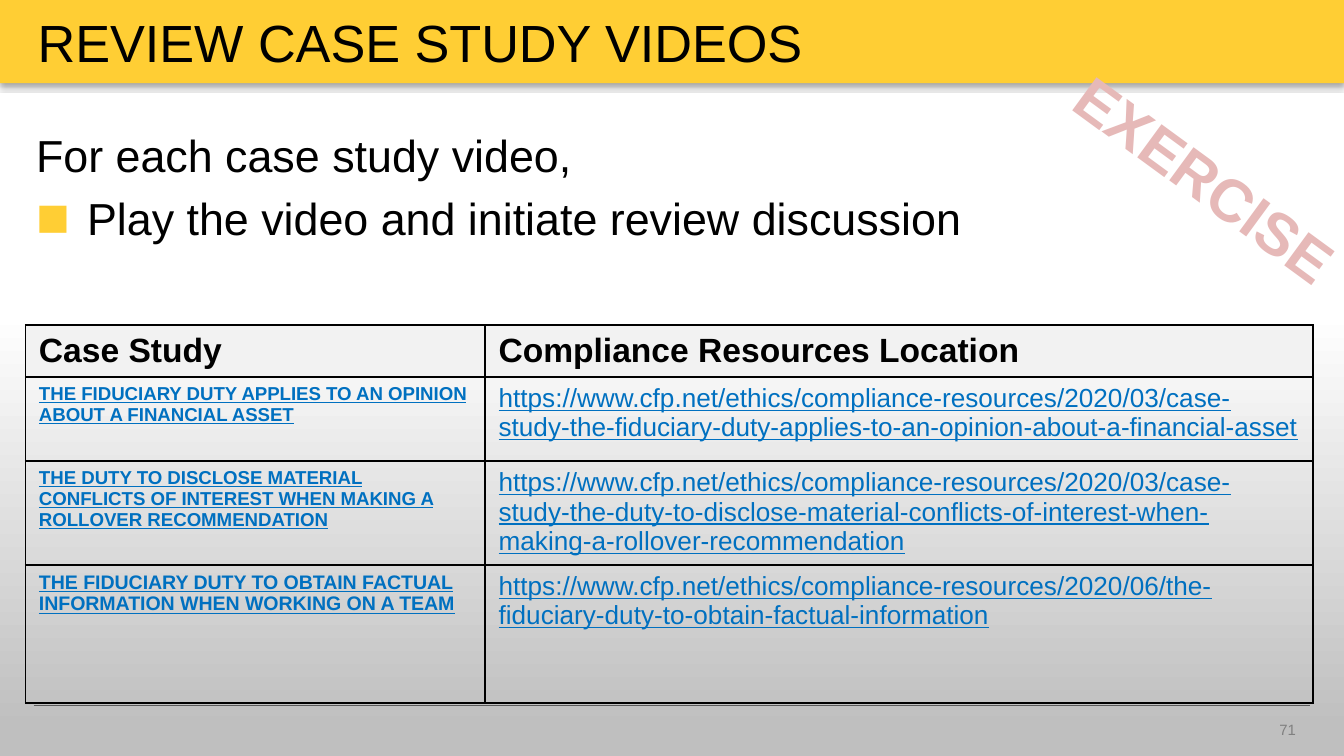
from lxml import etree
from pptx import Presentation
from pptx.dml.color import RGBColor
from pptx.enum.shapes import MSO_CONNECTOR, MSO_SHAPE
from pptx.enum.text import MSO_ANCHOR, PP_ALIGN
from pptx.oxml.ns import qn
from pptx.util import Inches, Pt

RECT, LINE = MSO_SHAPE.RECTANGLE, MSO_CONNECTOR.STRAIGHT
TOP, MID = MSO_ANCHOR.TOP, MSO_ANCHOR.MIDDLE
LEFT, CENTER = PP_ALIGN.LEFT, PP_ALIGN.CENTER

WIDE = 10
HIGH = WIDE * 9 / 16
FONT = "Arial"
HUES = {"gold": "FFCE34", "gray": "BFBFBF", "white": "FFFFFF", "rule": "595959",
        "stamp": "E6B9B8", "ink": "000000", "head": "F2F2F2", "link": "0070C0",
        "page": "808080"}
BASE = "https://www.cfp.net/ethics/compliance-resources/2020/"
CASES = [
    ("THE FIDUCIARY DUTY APPLIES TO AN OPINION ABOUT A FINANCIAL ASSET", 10,
     "03/case-study-the-fiduciary-duty-applies-to-an-opinion-about-a-financial-asset"),
    ("THE DUTY TO DISCLOSE MATERIAL CONFLICTS OF INTEREST WHEN MAKING A "
     "ROLLOVER RECOMMENDATION", 10,
     "03/case-study-the-duty-to-disclose-material-conflicts-of-interest-when-"
     "making-a-rollover-recommendation"),
    ("THE FIDUCIARY DUTY TO OBTAIN FACTUAL INFORMATION WHEN WORKING ON A TEAM", 10.5,
     "06/the-fiduciary-duty-to-obtain-factual-information"),
]


def hue(name):
    return RGBColor.from_string(HUES[name])


def node(parent, tag, **attrs):
    return etree.SubElement(parent, qn(tag), {k: str(v) for k, v in attrs.items()})


def place(box):
    return [Inches(v) for v in box]


def write(frame, text, size=24, color="ink", bold=False, under=False,
          align=LEFT, anchor=TOP, wrap=True, more=False, gap=0, mark=None):
    """Put one formatted paragraph in a text frame; more adds it below the last."""
    frame.word_wrap = wrap
    frame.vertical_anchor = anchor
    para = frame.add_paragraph() if more else frame.paragraphs[0]
    para.alignment = align
    para.space_before = Pt(gap)
    if mark:
        props = para._p.get_or_add_pPr()
        props.set("marL", str(Inches(0.38)))
        props.set("indent", str(-Inches(0.38)))
        node(node(props, "a:buClr"), "a:srgbClr", val=HUES["gold"])
        node(props, "a:buSzPct", val=125000)
        node(props, "a:buFont", typeface=FONT)
        node(props, "a:buChar", char=mark)
    run = para.add_run()
    run.text = text
    font = run.font
    font.name, font.size, font.bold, font.underline = FONT, Pt(size), bold, under
    font.color.rgb = hue(color)


def panel(slide, box):
    """Borderless rectangle with a soft shadow below."""
    shape = slide.shapes.add_shape(RECT, *place(box))
    shape.line.fill.background()
    shape.shadow.inherit = False
    glow = node(shape._element.spPr.find(qn("a:effectLst")), "a:outerShdw",
                blurRad=Pt(3.1), dist=Pt(1.8), dir=5400000, rotWithShape=0)
    node(node(glow, "a:srgbClr", val=HUES["ink"]), "a:alpha", val=35000)
    return shape


def backdrop(slide, box):
    x, y, w, h = box
    # Gold band
    band = panel(slide, (x, y, w, h * 0.11))
    band.fill.solid()
    band.fill.fore_color.rgb = hue("gold")
    # Gradient page, gray at the bottom
    page = panel(slide, (x, y + 0.69, w, h - 0.69))
    page.fill.gradient()
    page.fill.gradient_angle = 90
    for stop, spot, name in zip(page.fill.gradient_stops, (0.04, 0.67), ("gray", "white")):
        stop.position = spot
        stop.color.rgb = hue(name)
    # Footer rule
    ends = (x + w * 0.025, y + 5.25, x + w * 0.975, y + 5.25)
    rule = slide.shapes.add_connector(LINE, *place(ends))
    rule.line.color.rgb = hue("rule")
    rule.line.width = Pt(0.75)
    node(rule._element.spPr, "a:effectLst")


def stamp(slide, box):
    tag = slide.shapes.add_textbox(*place(box))
    tag.rotation = 36.2
    write(tag.text_frame, "EXERCISE", size=32, color="stamp", bold=True,
          align=CENTER, wrap=False)


def heading(slide, box):
    title = slide.shapes.title
    slide.shapes._spTree.append(title._element)  # bring above the band
    title.left, title.top, title.width, title.height = place(box)
    write(title.text_frame, "REVIEW CASE STUDY VIDEOS", size=28, anchor=MID)


def intro(slide, box):
    frame = slide.shapes.add_textbox(*place(box)).text_frame
    write(frame, "For each case study video,")
    write(frame, "Play the video and initiate review discussion",
          more=True, gap=4.8, mark="■")


def edge(cell):
    """Black 1 pt border on all four sides, tight foot."""
    cell.margin_bottom = Inches(0.02)
    props = cell._tc.get_or_add_tcPr()
    for i, side in enumerate("LRTB"):
        line = node(props, "a:ln" + side, w=Pt(1))
        node(node(line, "a:solidFill"), "a:srgbClr", val=HUES["ink"])
        props.insert(i, line)


def cases(slide, box):
    x, y, w, h = box
    rows = (0.138, 0.225, 0.269, 0.368)
    cols = (0.357, 0.643)
    grid = slide.shapes.add_table(len(rows), len(cols), *place(box)).table
    for row, part in zip(grid.rows, rows):
        row.height = Inches(h * part)
    for col, part in zip(grid.columns, cols):
        col.width = Inches(w * part)
    # Header row
    for i, text in enumerate(("Case Study", "Compliance Resources Location")):
        cell = grid.cell(0, i)
        write(cell.text_frame, text, size=18, bold=True)
        cell.fill.solid()
        cell.fill.fore_color.rgb = hue("head")
        edge(cell)
    # One row for each case
    for r, (name, size, tail) in enumerate(CASES, 1):
        left, right = grid.cell(r, 0), grid.cell(r, 1)
        write(left.text_frame, name, size=size, color="link", bold=True, under=True)
        write(right.text_frame, BASE + tail, size=14, color="link", under=True)
        for cell in (left, right):
            cell.fill.background()
            edge(cell)


def number(slide, box):
    frame = slide.shapes.add_textbox(*place(box)).text_frame
    write(frame, "71", size=8, color="page")


def main():
    deck = Presentation()
    deck.slide_width, deck.slide_height = Inches(WIDE), Inches(HIGH)
    slide = deck.slides.add_slide(deck.slide_layouts[5])
    backdrop(slide, (0, 0, WIDE, HIGH))
    stamp(slide, (7.68, 1.01, 2.58, 0.64))
    heading(slide, (0.18, 0, 7.56, HIGH * 0.11))
    intro(slide, (0.17, 0.9, WIDE * 0.9, 4))
    cases(slide, (0.19, 2.42, 9.58, 2.79))
    number(slide, (9.42, 5.31, 0.58, 0.3))
    deck.save("out.pptx")


if __name__ == "__main__":
    main()
